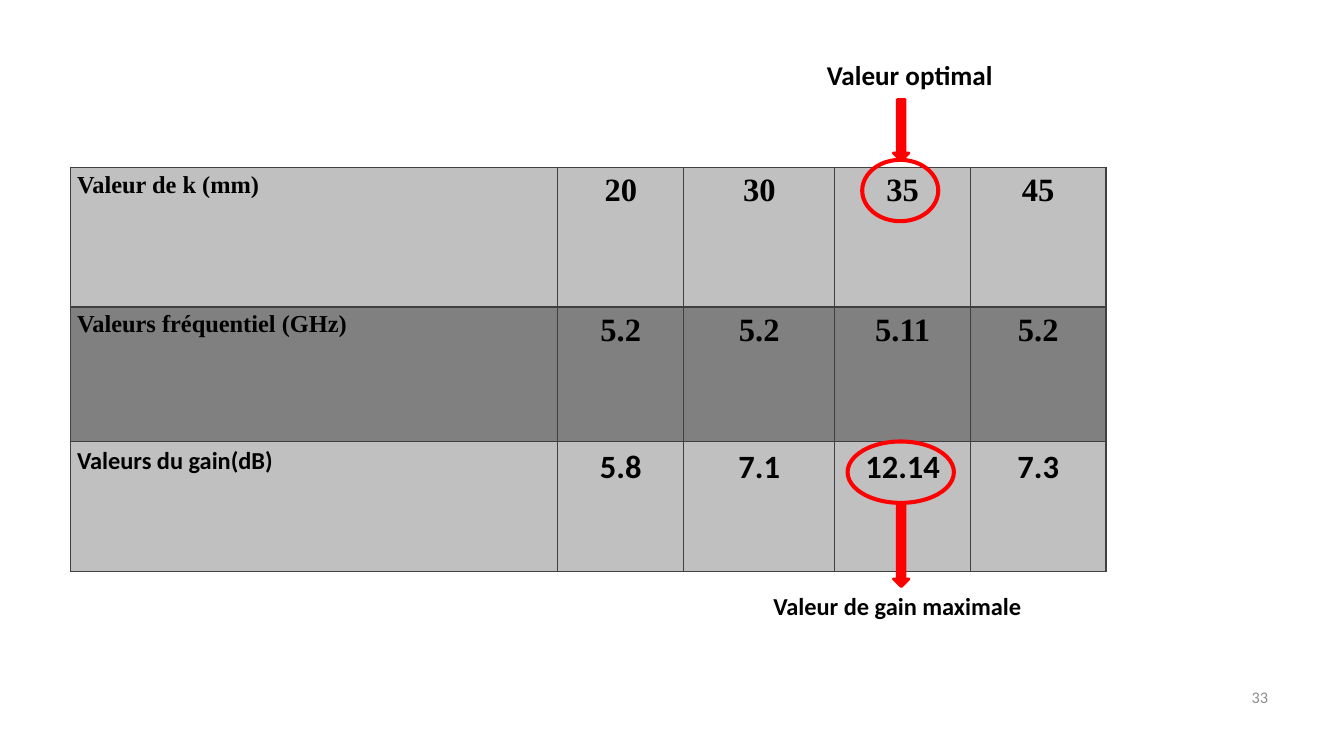
from dataclasses import dataclass

import pptx
import pptx.dml.color
import pptx.enum.shapes
import pptx.enum.text
import pptx.oxml
import pptx.oxml.ns
import pptx.util
from pptx.enum.shapes import MSO_SHAPE
from pptx.enum.text import MSO_ANCHOR, PP_ALIGN

EMU_PER_PX = 9144  # 100 px to the inch
COLORS = {
    "text": "000000",
    "light_row": "C0C0C0",
    "dark_row": "808080",
    "border": "404040",
    "mark": "FF0000",
    "page_number": "8C8C8C",
}
SERIF = "Times New Roman"
SANS = "Calibri"

TABLE_LEFT, TABLE_TOP = 72, 172
COLUMN_WIDTHS = [500, 129, 155, 139, 139]


@dataclass(frozen=True)
class Box:
    left: int
    top: int
    width: int
    height: int

    def emu(self) -> list[pptx.util.Emu]:
        return [px(n) for n in (self.left, self.top, self.width, self.height)]


@dataclass(frozen=True)
class TableRow:
    label: str
    values: list[str]
    height: int
    fill: str
    font: str
    space_before: int
    space_after: int


@dataclass(frozen=True)
class Label:
    text: str
    box: Box
    size: int
    color: str = "text"
    bold: bool = True
    align: PP_ALIGN = PP_ALIGN.LEFT
    anchor: MSO_ANCHOR = MSO_ANCHOR.TOP


@dataclass(frozen=True)
class Mark:
    kind: MSO_SHAPE
    box: Box
    line_width: int
    filled: bool


ROWS = [
    TableRow("Valeur de k (mm)", ["20", "30", "35", "45"], 143, "light_row", SERIF, 0, 10),
    TableRow("Valeurs fréquentiel (GHz)", ["5.2", "5.2", "5.11", "5.2"], 138, "dark_row", SERIF, 0, 10),
    TableRow("Valeurs du gain(dB)", ["5.8", "7.1", "12.14", "7.3"], 133, "light_row", SANS, 12, 3),
]
LABELS = [
    Label("33", Box(988, 695, 322, 40), 12, "page_number", False, PP_ALIGN.RIGHT, MSO_ANCHOR.MIDDLE),
    Label("Valeur optimal", Box(838, 55, 195, 44), 20),
    Label("Valeur de gain maximale", Box(783, 602, 281, 40), 18),
]
MARKS = [
    Mark(MSO_SHAPE.OVAL, Box(884, 164, 78, 63), 3, False),
    Mark(MSO_SHAPE.DOWN_ARROW, Box(916, 102, 16, 63), 2, True),
    Mark(MSO_SHAPE.OVAL, Box(869, 453, 109, 63), 3, False),
    Mark(MSO_SHAPE.DOWN_ARROW, Box(916, 516, 16, 86), 2, True),
]


def px(length: int) -> pptx.util.Emu:
    return pptx.util.Emu(length * EMU_PER_PX)


def rgb(name: str) -> pptx.dml.color.RGBColor:
    return pptx.dml.color.RGBColor.from_string(COLORS[name])


def format_paragraph(paragraph, font: str, size: int, color: str, bold: bool, align: PP_ALIGN) -> None:
    paragraph.alignment = align
    for run in paragraph.runs:
        run.font.name = font
        run.font.size = pptx.util.Pt(size)
        run.font.bold = bold
        run.font.color.rgb = rgb(color)


def add_borders(cell) -> None:
    properties = cell._tc.get_or_add_tcPr()
    for side in ("lnL", "lnR", "lnT", "lnB"):
        properties.append(pptx.oxml.parse_xml(
            f'<a:{side} {pptx.oxml.ns.nsdecls("a")} w="{pptx.util.Pt(1)}">'
            f'<a:solidFill><a:srgbClr val="{COLORS["border"]}"/></a:solidFill></a:{side}>'
        ))


def fill_cell(cell, text: str, row: TableRow, size: int, align: PP_ALIGN) -> None:
    add_borders(cell)
    cell.fill.solid()
    cell.fill.fore_color.rgb = rgb(row.fill)
    cell.margin_left = cell.margin_right = px(7)
    cell.margin_top = cell.margin_bottom = 0
    cell.text_frame.text = text
    paragraph = cell.text_frame.paragraphs[0]
    format_paragraph(paragraph, row.font, size, "text", True, align)
    paragraph.line_spacing = 1.15
    paragraph.space_before = pptx.util.Pt(row.space_before)
    paragraph.space_after = pptx.util.Pt(row.space_after)


def add_gain_table(slide) -> None:
    box = Box(TABLE_LEFT, TABLE_TOP, sum(COLUMN_WIDTHS), sum(row.height for row in ROWS))
    table = slide.shapes.add_table(len(ROWS), len(COLUMN_WIDTHS), *box.emu()).table
    table.first_row = table.horz_banding = False
    for column, width in zip(table.columns, COLUMN_WIDTHS):
        column.width = px(width)
    for row_index, row in enumerate(ROWS):
        table.rows[row_index].height = px(row.height)
        fill_cell(table.cell(row_index, 0), row.label, row, 18, PP_ALIGN.LEFT)
        for column_index, value in enumerate(row.values, start=1):
            fill_cell(table.cell(row_index, column_index), value, row, 24, PP_ALIGN.CENTER)


def add_label(slide, label: Label) -> None:
    text_frame = slide.shapes.add_textbox(*label.box.emu()).text_frame
    text_frame.word_wrap = True
    text_frame.vertical_anchor = label.anchor
    text_frame.text = label.text
    format_paragraph(text_frame.paragraphs[0], SANS, label.size, label.color, label.bold, label.align)


def add_mark(slide, mark: Mark) -> None:
    shape = slide.shapes.add_shape(mark.kind, *mark.box.emu())
    shape.shadow.inherit = False
    shape.line.color.rgb = rgb("mark")
    shape.line.width = pptx.util.Pt(mark.line_width)
    if mark.filled:
        shape.fill.solid()
        shape.fill.fore_color.rgb = rgb("mark")
    else:
        shape.fill.background()


def main() -> None:
    presentation = pptx.Presentation()
    presentation.slide_width = px(1378)
    presentation.slide_height = px(750)
    slide = presentation.slides.add_slide(presentation.slide_layouts[6])
    add_gain_table(slide)
    for label in LABELS:
        add_label(slide, label)
    for mark in MARKS:
        add_mark(slide, mark)
    presentation.save("out.pptx")


if __name__ == "__main__":
    main()
